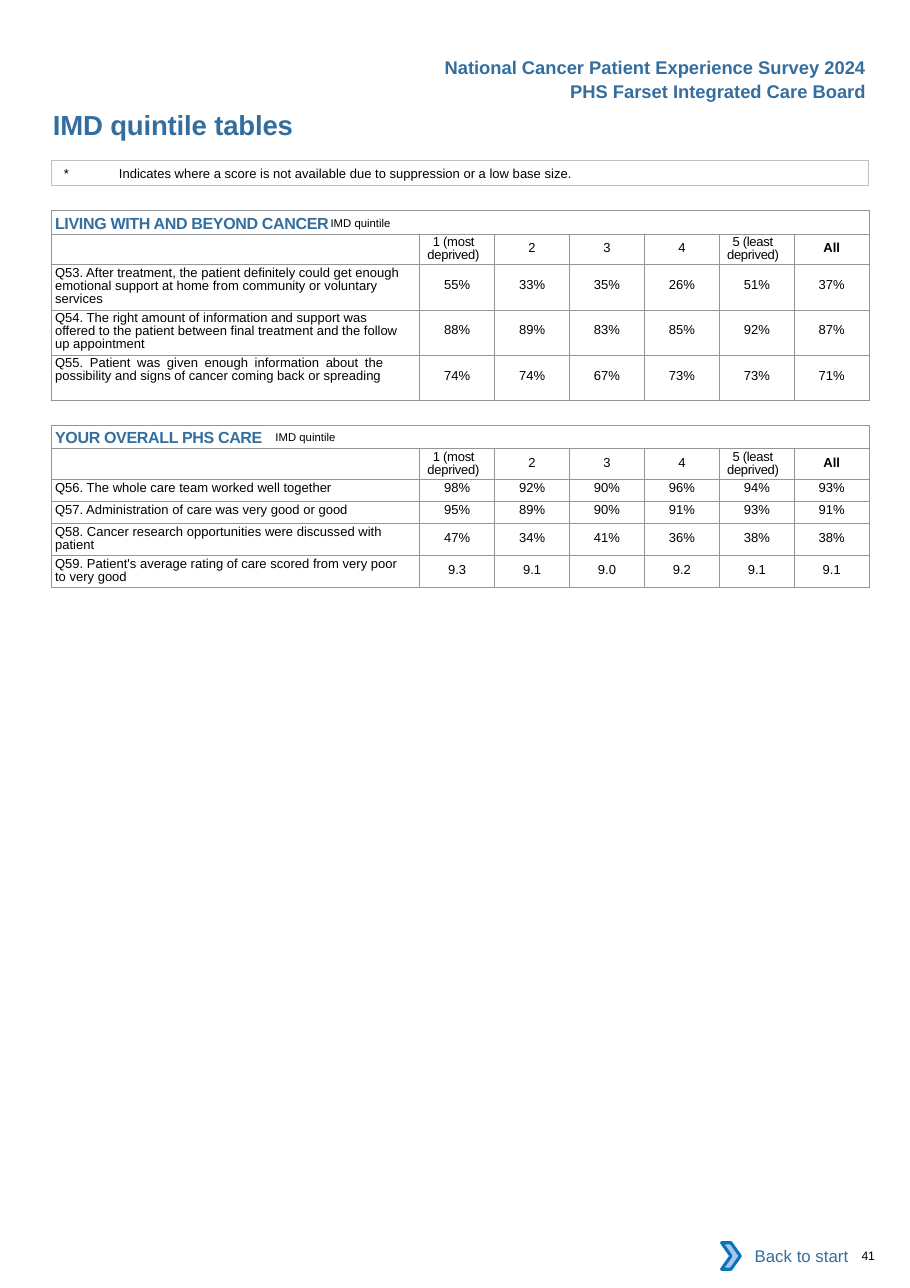
from dataclasses import dataclass
from typing import Any, NamedTuple

import pptx
import pptx.dml.color
import pptx.enum.shapes
import pptx.enum.text
import pptx.util
from lxml import etree

# The page is a fine grid: 826 columns by 1169 rows, 100 to the inch.
PAGE_COLUMNS, PAGE_ROWS = 826, 1169
COLORS = {"heading": "336E9F", "text": "000000", "table border": "939598", "note border": "BFBFBF",
          "paper": "FFFFFF", "chevron fill": "A8C7E9", "chevron line": "0A74BB"}
FONT = "Arial"
BODY_SIZE = 8.5
LINE_SPACING = 8.6
ALIGN = pptx.enum.text.PP_ALIGN
MIDDLE = pptx.enum.text.MSO_ANCHOR.MIDDLE
DRAWING = "http://schemas.openxmlformats.org/drawingml/2006/main"

TABLE_LEFT, TABLE_WIDTH = 47, 741
QUESTION_WIDTH, SCORE_WIDTH = 334, 68
SECTION_HEIGHT, HEADER_HEIGHT = 21, 28
GROUPS = ["1 (most deprived)", "2", "3", "4", "5 (least deprived)", "All"]


class Box(NamedTuple):
    left: float
    top: float
    width: float
    height: float


class RowKind(NamedTuple):
    height: int
    question_top: int
    score_top: int
    line_spacing: float | None


ONE_LINE = RowKind(20, 1, 1, None)
TWO_LINES = RowKind(29, 2, 6, LINE_SPACING)
THREE_LINES = RowKind(41, 2, 12, LINE_SPACING)


@dataclass
class Question:
    text: str
    scores: str
    kind: RowKind
    align: Any = ALIGN.LEFT
    right_margin: int = 12


@dataclass
class Section:
    title: str
    top: int
    questions: list[Question]


SECTIONS = [
    Section("LIVING WITH AND BEYOND CANCER", 191, [
        Question("Q53. After treatment, the patient definitely could get enough emotional support "
                 "at home from community or voluntary services",
                 "55% 33% 35% 26% 51% 37%", THREE_LINES),
        Question("Q54. The right amount of information and support was offered to the patient "
                 "between final treatment and the follow up appointment",
                 "88% 89% 83% 85% 92% 87%", THREE_LINES),
        Question("Q55. Patient was given enough information about the possibility and signs of "
                 "cancer coming back or spreading",
                 "74% 74% 67% 73% 73% 71%", THREE_LINES, ALIGN.JUSTIFY, 33),
    ]),
    Section("YOUR OVERALL PHS CARE", 386, [
        Question("Q56. The whole care team worked well together", "98% 92% 90% 96% 94% 93%", ONE_LINE),
        Question("Q57. Administration of care was very good or good", "95% 89% 90% 91% 93% 91%", ONE_LINE),
        Question("Q58. Cancer research opportunities were discussed with patient",
                 "47% 34% 41% 36% 38% 38%", TWO_LINES),
        Question("Q59. Patient's average rating of care scored from very poor to very good",
                 "9.3 9.1 9.0 9.2 9.1 9.1", TWO_LINES),
    ]),
]


def grid(steps: float) -> pptx.util.Length:
    return pptx.util.Inches(steps / 100)


def place(box: Box) -> list[pptx.util.Length]:
    return [grid(steps) for steps in box]


def color(name: str) -> pptx.dml.color.RGBColor:
    return pptx.dml.color.RGBColor.from_string(COLORS[name])


def set_margins(target: Any, left: float = 0, top: float = 0, right: float = 0, bottom: float = 0) -> None:
    target.margin_left, target.margin_top = grid(left), grid(top)
    target.margin_right, target.margin_bottom = grid(right), grid(bottom)


def write_text(frame: Any, text: str, *, size: float = BODY_SIZE, ink: str = "text", bold: bool = False,
               align: Any = ALIGN.LEFT, spacing: float = 0, raised: int = 0, indent: float = 0,
               first_line: float = 0, line_spacing: float | None = None, tab: float | None = None) -> None:
    """Append a run to the frame's paragraph and format both."""
    paragraph = frame.paragraphs[0]
    paragraph.alignment = align
    if line_spacing:
        paragraph.line_spacing = pptx.util.Pt(line_spacing)
    properties = paragraph._p.get_or_add_pPr()
    properties.set("marL", str(grid(indent)))
    properties.set("indent", str(grid(first_line)))
    if tab:
        tabs = etree.SubElement(properties, f"{{{DRAWING}}}tabLst")
        etree.SubElement(tabs, f"{{{DRAWING}}}tab", pos=str(grid(tab)), algn="l")
    run = paragraph.add_run()
    run.text = text
    run.font.name, run.font.size, run.font.bold = FONT, pptx.util.Pt(size), bold
    run.font.color.rgb = color(ink)
    run_properties = run._r.get_or_add_rPr()
    if spacing:
        run_properties.set("spc", str(round(spacing * 100)))
    if raised:
        run_properties.set("baseline", str(raised * 1000))


def add_text_box(slide: Any, box: Box) -> Any:
    return slide.shapes.add_textbox(*place(box)).text_frame


def add_plain_shape(shapes: Any, preset: Any, box: Box, fill: str | None = None,
                    line: str | None = None, line_width: float = 0.5) -> Any:
    shape = shapes.add_shape(preset, *place(box))
    shape.shadow.inherit = False
    if fill:
        shape.fill.solid()
        shape.fill.fore_color.rgb = color(fill)
    else:
        shape.fill.background()
    if line:
        shape.line.color.rgb = color(line)
        shape.line.width = pptx.util.Pt(line_width)
    else:
        shape.line.fill.background()
    return shape


def style_cell(cell: Any) -> None:
    """Give a cell thin borders, no fill, no margins and a small empty line."""
    properties = cell._tc.get_or_add_tcPr()
    for side in ("lnL", "lnR", "lnT", "lnB"):
        border = etree.SubElement(properties, f"{{{DRAWING}}}{side}", w=str(pptx.util.Pt(0.5)))
        fill = etree.SubElement(border, f"{{{DRAWING}}}solidFill")
        etree.SubElement(fill, f"{{{DRAWING}}}srgbClr", val=COLORS["table border"])
    cell.fill.background()
    set_margins(cell)
    ending = cell.text_frame.paragraphs[0]._p.get_or_add_endParaRPr()
    ending.set("sz", str(round(BODY_SIZE * 100)))


def add_section(slide: Any, section: Section) -> None:
    heights = [SECTION_HEIGHT, HEADER_HEIGHT] + [question.kind.height for question in section.questions]
    widths = [QUESTION_WIDTH] + [SCORE_WIDTH] * len(GROUPS)
    box = Box(TABLE_LEFT, section.top, TABLE_WIDTH, sum(heights))
    table = slide.shapes.add_table(len(heights), len(widths), *place(box)).table
    table.first_row = table.horz_banding = False
    for column, width in zip(table.columns, widths):
        column.width = grid(width)
    for row, height in zip(table.rows, heights):
        row.height = grid(height)
        for cell in row.cells:
            style_cell(cell)

    heading = table.cell(0, 0)
    heading.merge(table.cell(0, len(GROUPS)))
    heading.vertical_anchor = MIDDLE
    write_text(heading.text_frame, section.title + "\t", size=10.5, ink="heading", bold=True,
               spacing=-0.2, indent=3, tab=472)
    write_text(heading.text_frame, "IMD quintile", size=12.8, raised=10, indent=3)

    for column, group in enumerate(GROUPS, 1):
        cell = table.cell(1, column)
        if "(" in group:
            set_margins(cell, top=2)
            write_text(cell.text_frame, group, spacing=-0.2, indent=7, first_line=5, line_spacing=LINE_SPACING)
        else:
            set_margins(cell, top=6)
            write_text(cell.text_frame, group, bold=group == "All", align=ALIGN.CENTER)

    for row, question in enumerate(section.questions, 2):
        cell = table.cell(row, 0)
        set_margins(cell, top=question.kind.question_top, right=question.right_margin)
        write_text(cell.text_frame, question.text, align=question.align, indent=3,
                   line_spacing=question.kind.line_spacing)
        for column, score in enumerate(question.scores.split(), 1):
            cell = table.cell(row, column)
            set_margins(cell, top=question.kind.score_top)
            write_text(cell.text_frame, score, align=ALIGN.CENTER)


def main() -> None:
    presentation = pptx.Presentation()
    presentation.slide_width, presentation.slide_height = grid(PAGE_COLUMNS), grid(PAGE_ROWS)
    slide = presentation.slides.add_slide(presentation.slide_layouts[6])
    presets = pptx.enum.shapes.MSO_SHAPE

    page_number = add_text_box(slide, Box(772, 1133, 51, 13))
    set_margins(page_number)
    write_text(page_number, "41", size=8, spacing=-0.2, indent=10)
    title = add_text_box(slide, Box(47, 96, 450, 30))
    title.word_wrap = True
    set_margins(title, top=2)
    write_text(title, "IMD quintile tables", size=18, ink="heading", bold=True, spacing=-0.1, indent=1)
    for text, box in (("National Cancer Patient Experience Survey 2024", Box(392, 46, 404, 30)),
                      ("PHS Farset Integrated Care Board", Box(501, 68, 295, 30))):
        write_text(add_text_box(slide, box), text, size=12, ink="heading", bold=True, align=ALIGN.RIGHT)

    note = add_plain_shape(slide.shapes, presets.RECTANGLE, Box(47, 146, 741, 22), line="note border").text_frame
    note.vertical_anchor = MIDDLE
    set_margins(note, top=4, bottom=4)
    write_text(note, "*\tIndicates where a score is not available due to suppression or a low base size.",
               indent=11, tab=34)
    for section in SECTIONS:
        add_section(slide, section)

    back_button = slide.shapes.add_group_shape().shapes
    label = add_plain_shape(back_button, presets.RECTANGLE, Box(662, 1119, 118, 42), fill="paper").text_frame
    label.vertical_anchor = MIDDLE
    write_text(label, "Back to start", size=11, ink="heading", align=ALIGN.RIGHT)
    add_plain_shape(back_button, presets.CHEVRON, Box(655, 1128, 17, 24), "chevron fill", "chevron line", 2)
    presentation.save("out.pptx")


if __name__ == "__main__":
    main()
